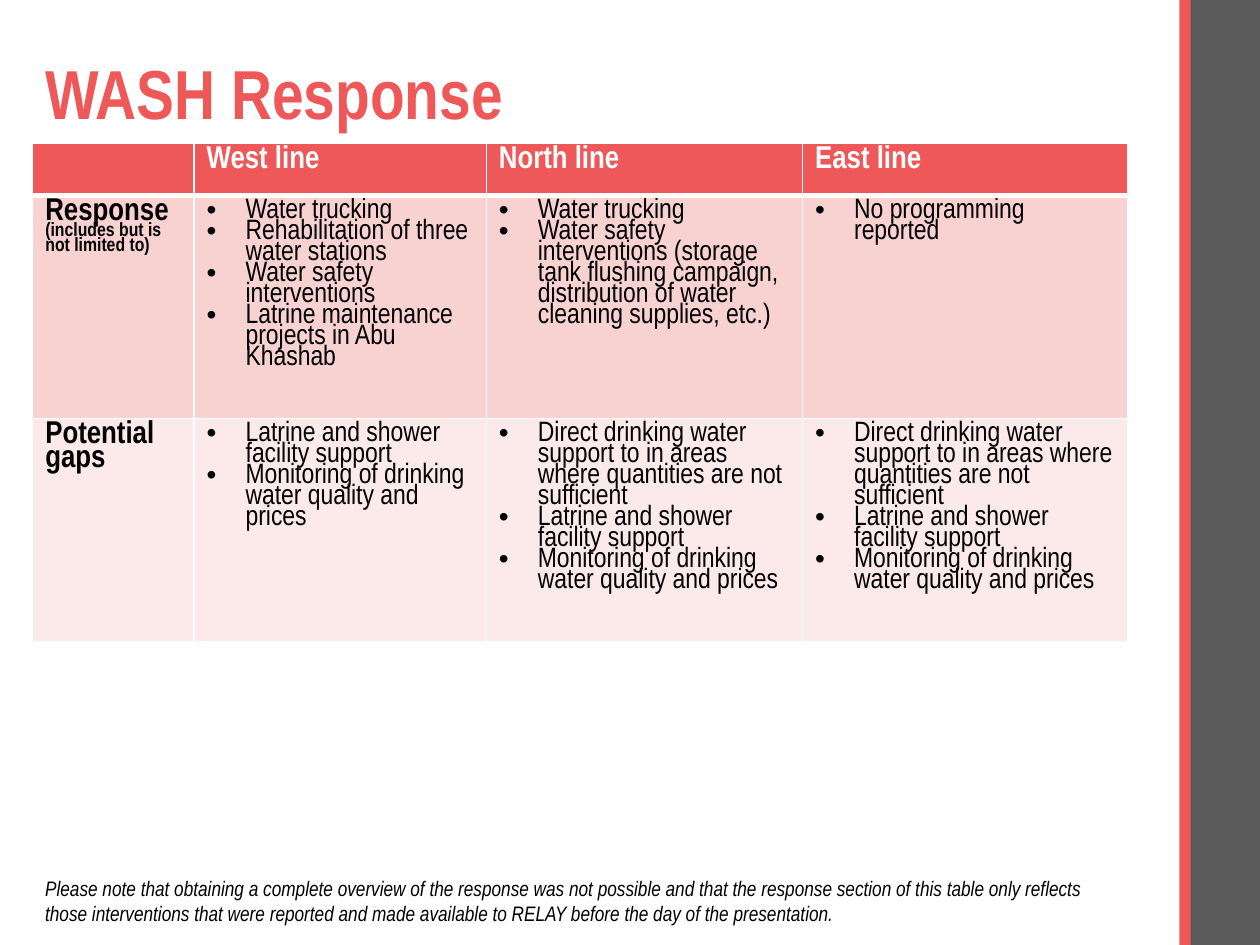
from lxml import etree
from pptx import Presentation
from pptx.dml.color import RGBColor
from pptx.enum import shapes, text
from pptx.oxml import ns
from pptx.util import Inches, Pt

RED, GREY, WHITE, BLACK = "EE5859", "5A5A5A", "FFFFFF", "000000"
LEFT, WIDE = 0.26, 8.69


def color(code):
    return RGBColor.from_string(code)


def paint(item, code):
    item.fill.solid()
    item.fill.fore_color.rgb = color(code)


def write(para, words, size=16, tint=BLACK, bold=False, slant=False,
          space=None, bullet=False):
    if bullet:
        props = para._p.get_or_add_pPr()
        props.set("marL", str(Inches(0.31)))
        props.set("indent", str(-Inches(0.31)))
        etree.SubElement(props, ns.qn("a:buFont"), typeface="Arial")
        etree.SubElement(props, ns.qn("a:buChar"), char="•")
    if space:
        para.line_spacing = space
    font = para.add_run().font
    para.runs[0].text = words
    font.name, font.size = "Arial Narrow", Pt(size)
    font.bold, font.italic = bold, slant
    font.color.rgb = color(tint)


def edge(cell, base=1):
    """Draw white lines around a cell; base is the width of the lower one."""
    props = cell._tc.get_or_add_tcPr()
    for spot, side in enumerate("LRTB"):
        width = base if side == "B" else 1
        line = etree.Element(ns.qn("a:ln" + side), w=str(Pt(width)))
        fill = etree.SubElement(line, ns.qn("a:solidFill"))
        etree.SubElement(fill, ns.qn("a:srgbClr"), val=WHITE)
        props.insert(spot, line)


class Deck:
    def __init__(self):
        self.file = Presentation()
        self.file.slide_width = Inches(10)
        self.file.slide_height = Inches(7.5)
        self.slide = self.file.slides.add_slide(self.file.slide_layouts[5])

    def bar(self, left, width, tint):
        shape = self.slide.shapes.add_shape(
            shapes.MSO_SHAPE.RECTANGLE, Inches(left), 0,
            Inches(width), self.file.slide_height)
        shape.shadow.inherit = False
        paint(shape, tint)
        shape.line.fill.background()

    def title(self, words, top, height):
        shape = self.slide.shapes.title
        shape.left, shape.top = Inches(LEFT), Inches(top)
        shape.width, shape.height = Inches(WIDE), Inches(height)
        frame = shape.text_frame
        frame.vertical_anchor = text.MSO_ANCHOR.MIDDLE
        frame.auto_size = text.MSO_AUTO_SIZE.NONE
        para = frame.paragraphs[0]
        para.alignment = text.PP_ALIGN.LEFT
        write(para, words, size=39.6, tint=RED, bold=True, space=0.9)

    def note(self, words, top, height):
        box = self.slide.shapes.add_textbox(
            Inches(LEFT), Inches(top), Inches(WIDE), Inches(height))
        box.text_frame.word_wrap = True
        write(box.text_frame.paragraphs[0], words, size=12, slant=True)

    def table(self, top, widths, heights, fills, rows):
        grid = self.slide.shapes.add_table(
            len(rows), len(widths), Inches(LEFT), Inches(top),
            Inches(WIDE), Inches(sum(heights))).table
        for col, width in zip(grid.columns, widths):
            col.width = Inches(width)
        for r, row in enumerate(rows):
            grid.rows[r].height = Inches(heights[r])
            for c, lines in enumerate(row):
                cell = grid.cell(r, c)
                paint(cell, fills[r])
                edge(cell, base=1 if r else 3)
                self.fill(cell.text_frame, lines, head=r == 0, label=c == 0)

    def fill(self, frame, lines, head, label):
        for n, words in enumerate(lines):
            para = frame.add_paragraph() if n else frame.paragraphs[0]
            if head or label:
                write(para, words, size=11 if n else 18, bold=True,
                      tint=WHITE if head else BLACK, space=0.8)
            else:
                write(para, words, bullet=True, space=0.8)


def main():
    deck = Deck()

    # Side bars
    deck.bar(9.43, 0.57, GREY)
    deck.bar(9.36, 0.09, RED)

    deck.title("WASH Response", 0.4, 0.74)

    # Response and gaps by line
    support = ["Latrine and shower facility support",
               "Monitoring of drinking water quality and prices"]
    direct = ["Direct drinking water support to in areas where quantities "
              "are not sufficient"] + support
    rows = [
        [[], ["West line"], ["North line"], ["East line"]],
        [["Response", "(includes but is not limited to)"],
         ["Water trucking", "Rehabilitation of three water stations",
          "Water safety interventions",
          "Latrine maintenance projects in Abu Khashab"],
         ["Water trucking",
          "Water safety interventions (storage tank flushing campaign, "
          "distribution of water cleaning supplies, etc.)"],
         ["No programming reported"]],
        [["Potential gaps"], support, direct, direct],
    ]
    deck.table(1.14, [1.28, 2.32, 2.51, 2.58], [0.41, 1.77, 1.77],
               [RED, "F8D1D1", "FCEAEA"], rows)

    # Caveat
    deck.note("Please note that obtaining a complete overview of the response "
              "was not possible and that the response section of this table "
              "only reflects those interventions that were reported and made "
              "available to RELAY before the day of the presentation.",
              6.9, 0.5)

    deck.file.save("out.pptx")


if __name__ == "__main__":
    main()
